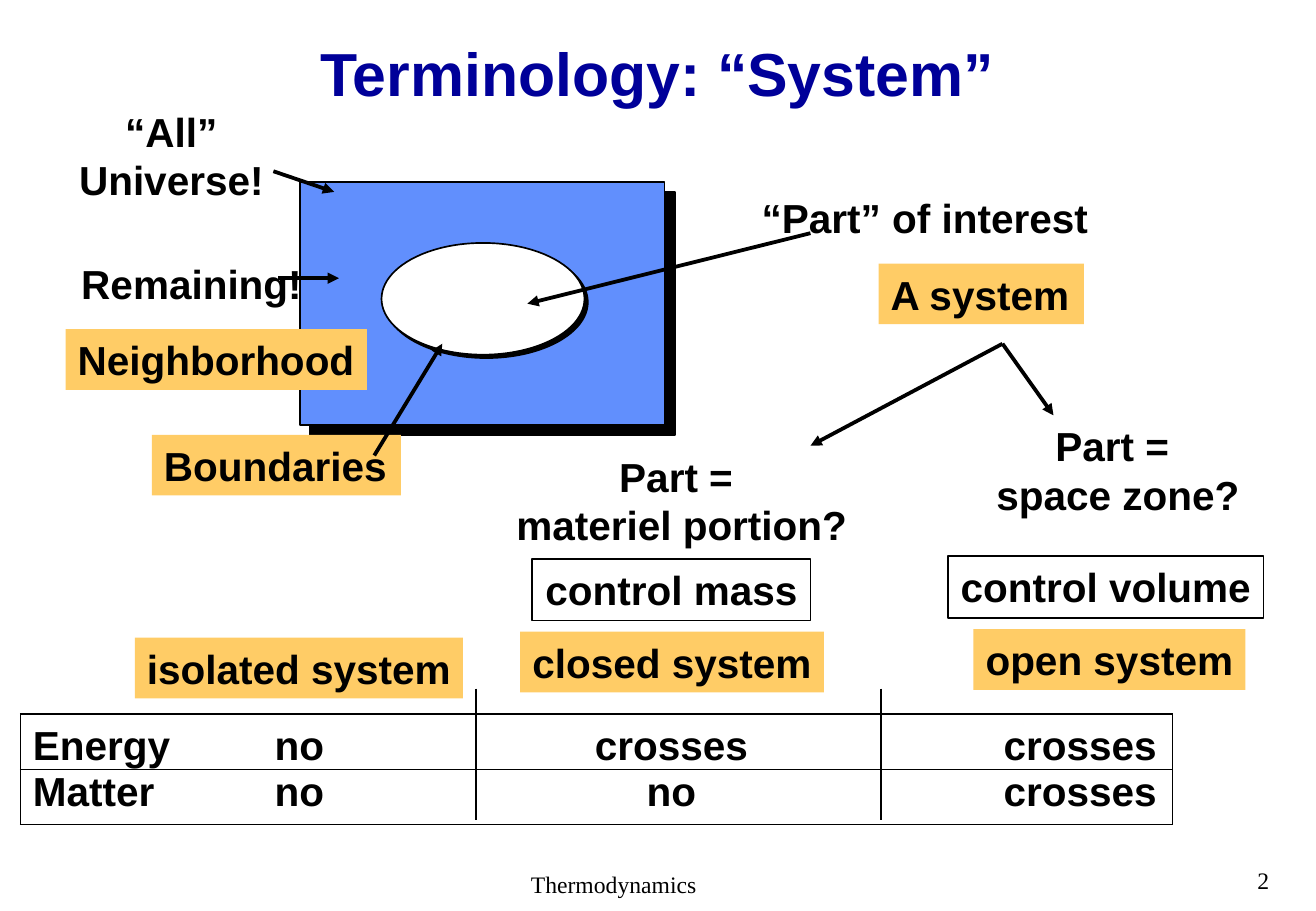
from dataclasses import dataclass

from lxml import etree
from pptx import Presentation
from pptx.dml.color import RGBColor
from pptx.enum.shapes import MSO_CONNECTOR, MSO_SHAPE
from pptx.enum.text import MSO_ANCHOR, MSO_AUTO_SIZE, PP_ALIGN
from pptx.oxml import parse_xml
from pptx.oxml.ns import nsdecls, qn
from pptx.util import Inches, Pt


@dataclass(frozen=True)
class Theme:
    ink: RGBColor = RGBColor.from_string("000000")
    title: RGBColor = RGBColor.from_string("000099")
    universe: RGBColor = RGBColor.from_string("618FFD")
    term: RGBColor = RGBColor.from_string("FFCC66")
    paper: RGBColor = RGBColor.from_string("FFFFFF")
    font: str = "Arial"
    footer_font: str = "Times New Roman"
    title_size: int = 36
    body_size: int = 24
    footer_size: int = 14
    thin: float = 1
    arrow: float = 2.25


THEME = Theme()


@dataclass(frozen=True)
class Box:
    left: float
    top: float
    width: float
    height: float

    def inner(self, left, top, width, height):
        return Box(self.left + left, self.top + top, width, height)

    def point(self, x, y):
        return self.left + x, self.top + y

    def lengths(self):
        return [Inches(v) for v in (self.left, self.top, self.width, self.height)]


def format_text(paragraphs, align=PP_ALIGN.LEFT, size=THEME.body_size,
                color=THEME.ink, font=THEME.font, bold=True):
    for paragraph in paragraphs:
        paragraph.alignment = align
        for run in paragraph.runs:
            run.font.name = font
            run.font.size = Pt(size)
            run.font.bold = bold
            run.font.color.rgb = color


def add_label(slide, box, text, fill=None, outlined=False, **style):
    label = slide.shapes.add_textbox(*box.lengths())
    if fill is not None:
        label.fill.solid()
        label.fill.fore_color.rgb = fill
    if outlined:
        label.line.color.rgb = THEME.ink
        label.line.width = Pt(THEME.thin)
    label.text_frame.word_wrap = False
    label.text_frame.auto_size = MSO_AUTO_SIZE.SHAPE_TO_FIT_TEXT
    label.text_frame.text = text
    format_text(label.text_frame.paragraphs, **style)


def add_line(slide, start, end, width=THEME.thin, arrow=False):
    line = slide.shapes.add_connector(
        MSO_CONNECTOR.STRAIGHT, *[Inches(v) for v in (*start, *end)])
    line.line.color.rgb = THEME.ink
    line.line.width = Pt(width)
    if arrow:
        etree.SubElement(line.line._get_or_add_ln(), qn("a:tailEnd"), type="triangle")
    etree.SubElement(line._element.spPr, qn("a:effectLst"))


def add_arrow(slide, start, end):
    add_line(slide, start, end, THEME.arrow, arrow=True)


def add_shadowed(slide, kind, box, fill, distance):
    """Add an outlined shape with a hard shadow to the lower right."""
    shape = slide.shapes.add_shape(kind, *box.lengths())
    shape.fill.solid()
    shape.fill.fore_color.rgb = fill
    shape.line.color.rgb = THEME.ink
    shape.line.width = Pt(THEME.thin)
    shape._element.spPr.append(parse_xml(
        f'<a:effectLst {nsdecls("a")}><a:outerShdw blurRad="0" dist="{Pt(distance)}" '
        f'dir="2700000" algn="tl" rotWithShape="0"><a:srgbClr val="{THEME.ink}"/>'
        '</a:outerShdw></a:effectLst>'))


def set_borders(cell, sides):
    """Draw the named sides (L, R, T, B) and clear the others."""
    properties = cell._tc.get_or_add_tcPr()
    for position, side in enumerate("LRTB"):
        paint = (f'<a:solidFill><a:srgbClr val="{THEME.ink}"/></a:solidFill>'
                 if side in sides else "<a:noFill/>")
        properties.insert(position, parse_xml(
            f'<a:ln{side} {nsdecls("a")} w="{Pt(THEME.thin)}">{paint}</a:ln{side}>'))


def place_title(slide, box, text):
    title = slide.shapes.title
    title.left, title.top, title.width, title.height = box.lengths()
    frame = title.text_frame
    frame.text = text
    frame.word_wrap = False
    frame.auto_size = MSO_AUTO_SIZE.NONE
    frame.vertical_anchor = MSO_ANCHOR.MIDDLE
    frame.paragraphs[0].line_spacing = 0.9
    format_text(frame.paragraphs, PP_ALIGN.CENTER, THEME.title_size, THEME.title)


def draw_universe(slide, box):
    add_shadowed(slide, MSO_SHAPE.RECTANGLE, box.inner(1.97, 0.7, 3, 2),
                 THEME.universe, 8.5)
    add_label(slide, box.inner(0.05, 0.03, 1.72, 0.9), "“All”\nUniverse!",
              align=PP_ALIGN.CENTER)
    add_arrow(slide, box.point(1.75, 0.61), box.point(2.25, 0.78))

    add_label(slide, box.inner(6.73, 1.37, 1.69, 0.5), "A system", THEME.term)
    add_shadowed(slide, MSO_SHAPE.OVAL, box.inner(2.64, 1.2, 1.67, 0.92),
                 THEME.paper, 2.8)
    add_arrow(slide, box.point(6.17, 1.12), box.point(3.84, 1.7))
    add_label(slide, box.inner(5.67, 0.74, 2.89, 0.5), "“Part” of interest")

    add_label(slide, box.inner(0.04, 1.91, 2.48, 0.5), "Neighborhood", THEME.term)
    add_arrow(slide, box.point(1.79, 1.49), box.point(2.29, 1.49))
    add_label(slide, box.inner(0.07, 1.28, 2.02, 0.5), "Remaining!")

    add_label(slide, box.inner(0.75, 2.78, 2.05, 0.5), "Boundaries", THEME.term)
    add_arrow(slide, box.point(2.58, 2.95), box.point(3.14, 2.03))


def draw_system_kinds(slide, box):
    center = PP_ALIGN.CENTER
    fork = box.point(4.15, 0.03)
    kinds = [
        ("Part = \nmateriel portion?", (0.05, 0.87, 2.92, 0.9),
         "control mass", (0.28, 1.8, 2.29, 0.51),
         "closed system", (0.18, 2.4, 2.5, 0.5), (2.57, 0.87)),
        ("Part = \nspace zone?", (4, 0.62, 2.2, 0.9),
         "control volume", (3.7, 1.78, 2.6, 0.51),
         "open system", (3.91, 2.38, 2.24, 0.5), (4.57, 0.62)),
    ]
    for question, asked, control, framed, system, marked, tip in kinds:
        add_label(slide, box.inner(*asked), question, align=center)
        add_label(slide, box.inner(*framed), control, outlined=True, align=center)
        add_label(slide, box.inner(*marked), system, THEME.term, align=center)
        add_arrow(slide, fork, box.point(*tip))


def draw_crossings(slide, box):
    """Tabulate what crosses the boundary of each kind of system."""
    add_label(slide, box.inner(0.94, 0, 2.7, 0.5), "isolated system", THEME.term,
              align=PP_ALIGN.CENTER)
    rows = [("Energy", "no", "crosses", "crosses"),
            ("Matter", "no", "no", "crosses")]
    widths = [1.99, 1.76, 3.33, 2.4]
    left_margins = [0.1, 0.1, 0, 1.01]
    frame = box.inner(0, 0.63, sum(widths), 0.91)
    table = slide.shapes.add_table(len(rows), len(widths), *frame.lengths()).table
    table.first_row = table.horz_banding = False
    for column, width in zip(table.columns, widths):
        column.width = Inches(width)
    for r, row in enumerate(rows):
        table.rows[r].height = Inches(frame.height / len(rows))
        for c, text in enumerate(row):
            cell = table.cell(r, c)
            cell.text = text
            cell.fill.background()
            cell.margin_top = cell.margin_bottom = 0
            cell.margin_left = Inches(left_margins[c])
            cell.margin_right = Inches(0.12 if c == 2 else 0)
            cell.vertical_anchor = MSO_ANCHOR.TOP if r else MSO_ANCHOR.BOTTOM
            format_text(cell.text_frame.paragraphs,
                        PP_ALIGN.CENTER if c == 2 else PP_ALIGN.LEFT)
            set_borders(cell, "TB" + "L" * (c == 0) + "R" * (c == len(row) - 1))
    for x in (sum(widths[:2]), sum(widths[:3])):
        add_line(slide, box.point(x, 0.42), box.point(x, 1.5))


def draw_footer(slide, box):
    style = dict(size=THEME.footer_size, font=THEME.footer_font, bold=False)
    add_label(slide, box.inner(4.27, 0.03, 1.58, 0.34), "Thermodynamics", **style)
    add_label(slide, box.inner(10.25, 0, 0.43, 0.33), "2", **style)


def main():
    deck = Presentation()
    deck.slide_width, deck.slide_height = Inches(10.83), Inches(7.5)
    slide = deck.slides.add_slide(deck.slide_layouts[5])
    place_title(slide, Box(2.52, 0.31, 5.78, 0.64), "Terminology: “System”")
    draw_universe(slide, Box(0.5, 0.8, 8.6, 3.3))
    draw_system_kinds(slide, Box(4.1, 2.8, 6.4, 2.9))
    draw_crossings(slide, Box(0.17, 5.25, 9.5, 1.54))
    draw_footer(slide, Box(0, 7.08, 10.83, 0.42))
    deck.save("out.pptx")


if __name__ == "__main__":
    main()
